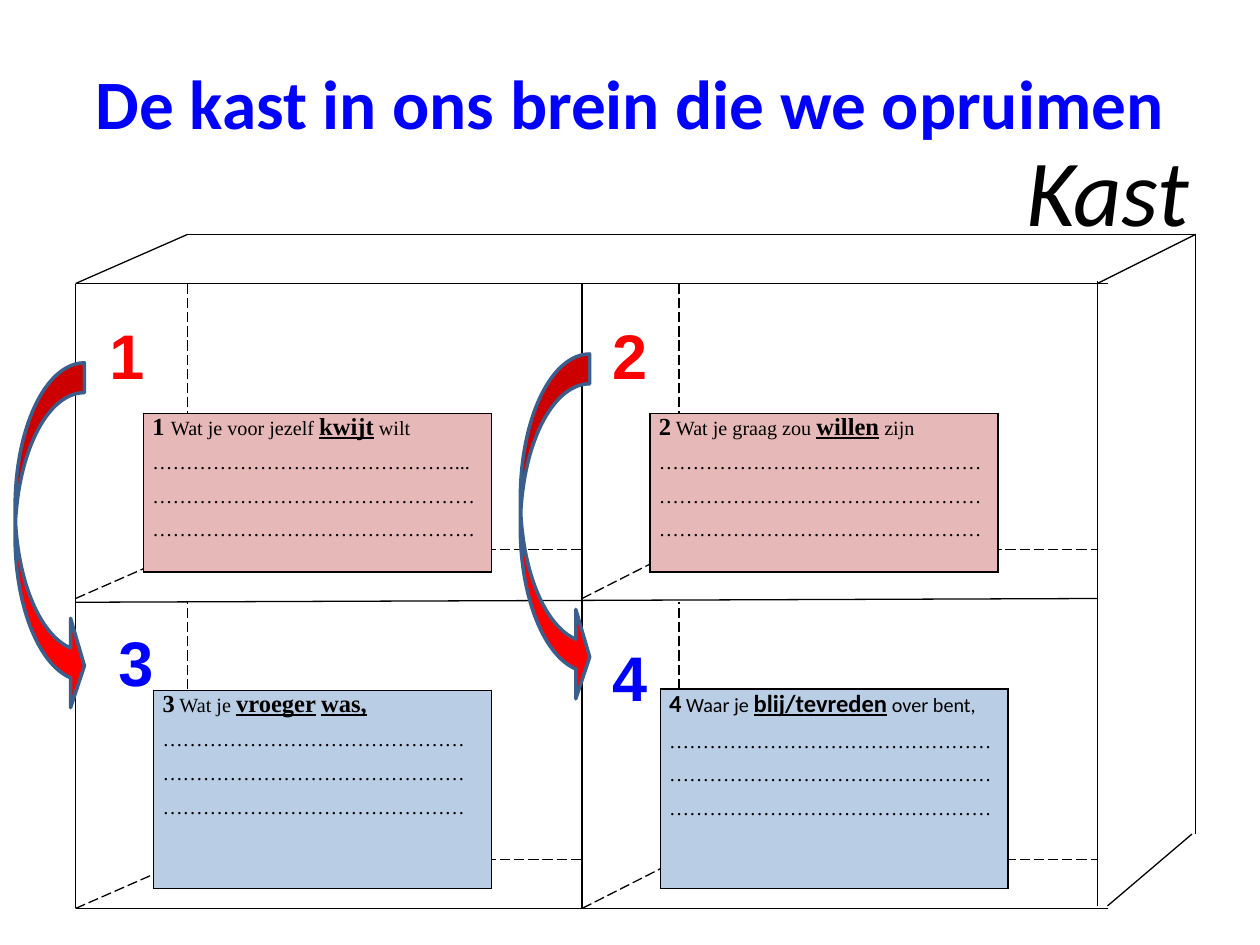
from lxml.etree import SubElement as Sub
from pptx import Presentation
from pptx.dml.color import RGBColor
from pptx.enum.dml import MSO_LINE
from pptx.enum.shapes import MSO_CONNECTOR, MSO_SHAPE
from pptx.enum.text import MSO_ANCHOR, PP_ALIGN
from pptx.oxml.ns import qn
from pptx.util import Inches, Pt

HUES = {"black": "000000", "red": "FF0000", "blue": "0000FF",
        "rose": "E6B9B8", "sky": "B9CDE5", "edge": "3A5F8C"}
SERIF, SANS = "Times New Roman", "Calibri"
DOT = "…"


def hue(name):
    return RGBColor.from_string(HUES[name])


def inch(*nums):
    return [Inches(n) for n in nums]


def style(font, name, size, color, bold=False, italic=False):
    font.name, font.size, font.bold, font.italic = name, Pt(size), bold, italic
    font.color.rgb = hue(color)


def title(slide, box, text):
    head = slide.shapes.title
    head.left, head.top, head.width, head.height = inch(*box)
    frame = head.text_frame
    frame.text, frame.vertical_anchor = text, MSO_ANCHOR.MIDDLE
    para = frame.paragraphs[0]
    para.alignment = PP_ALIGN.CENTER
    style(para.font, SANS, 39.6, "blue", bold=True)


def label(slide, box, text, look, wrap=False, top=0.05):
    frame = slide.shapes.add_textbox(*inch(*box)).text_frame
    frame.word_wrap, frame.margin_top = wrap, Inches(top)
    para = frame.paragraphs[0]
    para.text, para.alignment = text, PP_ALIGN.CENTER
    style(para.font, **look)


def rule(slide, start, end, dash=False):
    line = slide.shapes.add_connector(
        MSO_CONNECTOR.STRAIGHT, *inch(*start), *inch(*end))
    line.line.color.rgb, line.line.width = hue("black"), Pt(0.75)
    if dash:
        line.line.dash_style = MSO_LINE.LONG_DASH
    Sub(line._element.spPr, qn("a:effectLst"))


def cabinet(slide, box):
    """Draw the open cabinet: solid front and sides, dashed inner edges."""
    left, top, width, height = box
    far, base = left + width, top + height
    rise = 0.39
    front, side = top + rise, far - 0.78
    mid, shelf = left + 4.02, front + 2.5
    lip, back = side + 0.08, left + 0.89
    foot = base - 0.59
    solid = [
        ((left, shelf + 0.03), (side, shelf)),
        ((far, foot), (far, top)),
        ((side, base - 0.02), (side, front - 0.02)),
        ((left, front), (left, base)),
        ((left, front), (lip, front)),
        ((mid, front), (mid, base)),
        ((left, base), (lip, base)),
        ((left, front), (back, top)),
        ((back, top), (far, top)),
        ((side, front), (far, top)),
        ((lip, base - 0.02), (far - 0.03, foot)),
    ]
    for start, end in solid:
        rule(slide, start, end)
    for roof, floor in ((front, shelf), (shelf + 0.03, base)):
        for near, deep, stop in ((left, 0.89, mid), (mid, 0.77, side)):
            nook = (near + deep, floor - rise)
            for start, end in (((near, floor), nook),
                               (nook, (stop, nook[1])),
                               (nook, (nook[0], roof))):
                rule(slide, start, end, dash=True)


def border(cell):
    props = cell._tc.get_or_add_tcPr()
    for spot, tag in enumerate(("lnL", "lnR", "lnT", "lnB")):
        line = props.makeelement(qn("a:" + tag), {"w": str(Pt(1))})
        fill = Sub(line, qn("a:solidFill"))
        Sub(fill, qn("a:srgbClr"), val=HUES["black"])
        props.insert(spot, line)


def card(slide, box, color, face, runs, rows):
    """Place a one-cell table; runs pair a text with '', 'b' or 'bu'."""
    table = slide.shapes.add_table(1, 1, *inch(*box)).table
    table.first_row = table.horz_banding = False
    cell = table.cell(0, 0)
    cell.fill.solid()
    cell.fill.fore_color.rgb = hue(color)
    border(cell)
    cell.margin_left = cell.margin_right = Inches(0.07)
    cell.margin_top = cell.margin_bottom = 0
    frame = cell.text_frame
    para = frame.paragraphs[0]
    style(para.font, face, 11.5, "black")
    for text, mark in runs:
        run = para.add_run()
        run.text = text
        run.font.size = Pt(14 if mark else 11.5)
        run.font.bold, run.font.underline = "b" in mark, "u" in mark
    for text in rows:
        para = frame.add_paragraph()
        para.text, para.line_spacing = text, 1.5
        style(para.font, SERIF, 11.5, "black")


def arrow(slide, box):
    shape = slide.shapes.add_shape(MSO_SHAPE.CURVED_RIGHT_ARROW, *inch(*box))
    for spot, value in enumerate((0.43, 1.29, 0.2)):
        shape.adjustments[spot] = value
    shape.shadow.inherit = False
    shape.fill.solid()
    shape.fill.fore_color.rgb = hue("red")
    shape.line.color.rgb, shape.line.width = hue("edge"), Pt(2)


def main():
    deck = Presentation()
    deck.slide_width, deck.slide_height = inch(10, 7.5)
    slide = deck.slides.add_slide(deck.slide_layouts[5])
    title(slide, (0.5, 0.3, 9, 1.01), "De kast in ons brein die we opruimen")

    marks = (("1", 0.77, 2.41, "red"), ("2", 4.76, 2.41, "red"),
             ("3", 0.84, 4.85, "blue"), ("4", 4.76, 4.97, "blue"))
    for text, left, top, color in marks:
        look = dict(name="Arial", size=36, color=color, bold=True)
        label(slide, (left, top, 0.35, 0.85), text, look, top=0.1)

    cabinet(slide, (0.6, 1.86, 8.89, 5.35))

    card(slide, (5.16, 3.28, 2.76, 1.26), "rose", SERIF,
         [("2", "b"), (" Wat je graag zou ", ""), ("willen", "bu"),
          (" zijn", "")], [DOT * 16, DOT * 32])
    card(slide, (1.14, 3.28, 2.76, 1.26), "rose", SERIF,
         [("1 ", "b"), ("Wat je voor jezelf ", ""), ("kwijt", "bu"),
          (" wilt", "")], [DOT * 15 + "...", DOT * 32])
    card(slide, (1.22, 5.48, 2.68, 1.57), "sky", SERIF,
         [("3", "b"), (" Wat je ", ""), ("vroeger", "bu"), (" ", ""),
          ("was,", "bu")], [DOT * 45])
    card(slide, (5.24, 5.47, 2.76, 1.58), "sky", SANS,
         [("4", "b"), (" Waar je ", ""), ("blij/tevreden", "bu"),
          (" over bent,", "")], [DOT * 32, DOT * 16])

    for left, top in ((0.12, 2.88), (4.13, 2.81)):
        arrow(slide, (left, top, 0.55, 2.76))
    look = dict(name=SANS, size=54, color="black", italic=True)
    label(slide, (7.88, 1, 1.82, 1.03), "Kast", look, wrap=True)
    deck.save("out.pptx")


if __name__ == "__main__":
    main()
